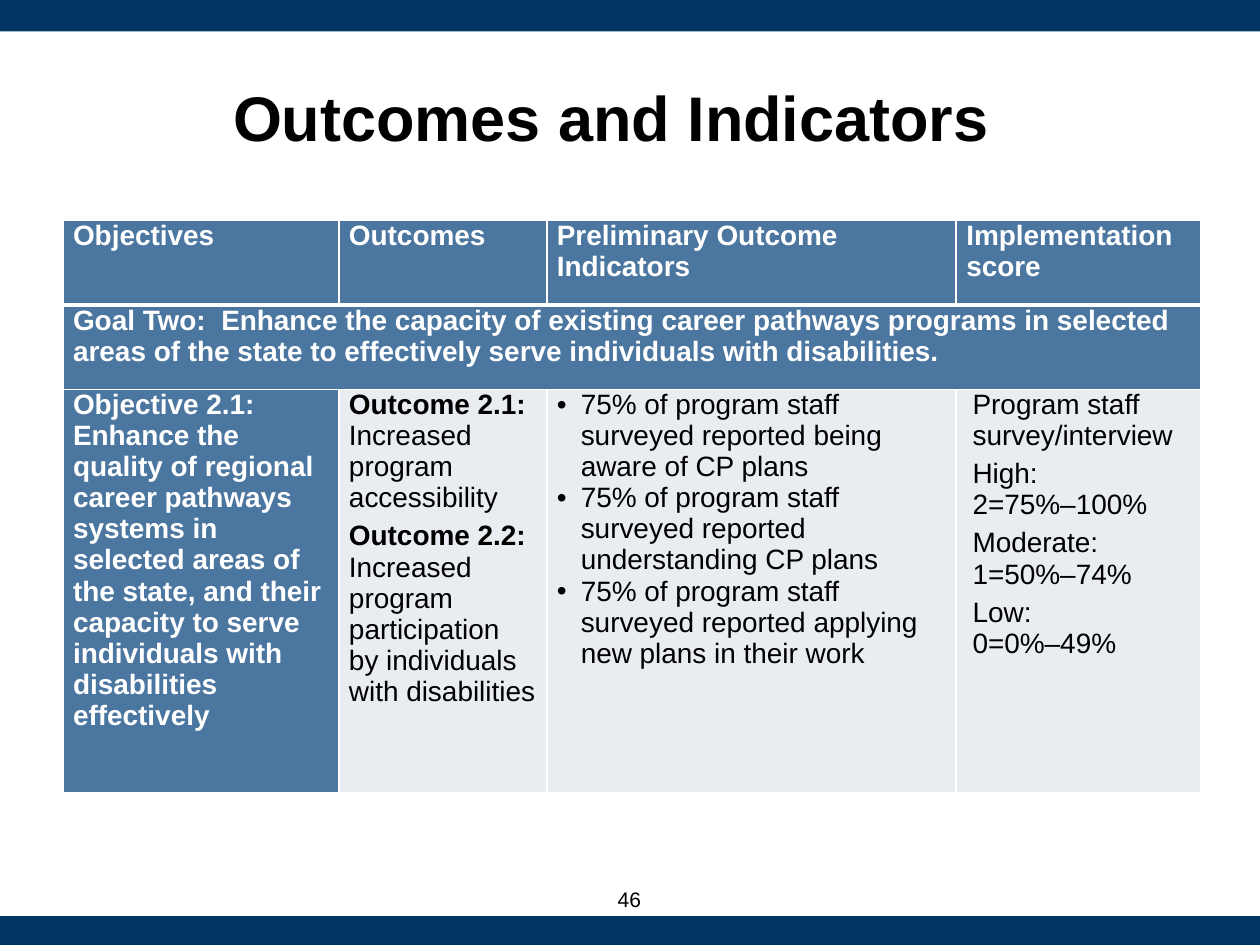
from lxml import etree
from pptx import Presentation
from pptx import util as u
from pptx.dml.color import RGBColor
from pptx.enum import shapes, text
from pptx.oxml import ns

NAVY = RGBColor(0x00, 0x34, 0x62)
BLUE = RGBColor(0x4B, 0x76, 0xA0)
PALE = RGBColor(0xE9, 0xEC, 0xF0)
WHITE = RGBColor(0xFF, 0xFF, 0xFF)
BLACK = RGBColor(0, 0, 0)

COLS = (2.19, 1.65, 3.25, 1.94)
ROWS = (0.67, 0.67, 3.2)
HEADS = ("Objectives", "Outcomes", "Preliminary Outcome Indicators",
         "Implementation score")
GOAL = ("Goal Two:  Enhance the capacity of existing career pathways programs "
        "in selected areas of the state to effectively serve individuals with "
        "disabilities.")
AIM = ("Objective 2.1:  Enhance the quality of regional career pathways "
       "systems in selected areas of the state, and their capacity to serve "
       "individuals with disabilities effectively")
RESULTS = (
    ("Outcome 2.1: ", "Increased program accessibility"),
    ("Outcome 2.2: ",
     "Increased program participation by individuals with disabilities"),
)
SIGNS = [("", "75% of program staff surveyed reported " + end) for end in (
    "being aware of CP plans", "understanding CP plans",
    "applying new plans in their work")]
SCORES = [("", line) for line in (
    "Program staff survey/interview", "High:\n2=75%–100%",
    "Moderate:\n1=50%–74%", "Low:\n0=0%–49%")]


def assign(item, values):
    for name, value in values.items():
        setattr(item, name, value)


def style(run, size, color, bold=False):
    assign(run.font, {"name": "Arial", "size": u.Pt(size), "bold": bold})
    run.font.color.rgb = color


def bar(slide, box):
    shape = slide.shapes.add_shape(shapes.MSO_SHAPE.RECTANGLE, *box)
    shape.shadow.inherit = False
    shape.fill.solid()
    shape.fill.fore_color.rgb = NAVY
    shape.line.fill.background()


def label(shape, box, words, size, bold=False, right=0.1):
    assign(shape, dict(zip(("left", "top", "width", "height"), box)))
    frame = shape.text_frame
    assign(frame, {"word_wrap": True, "margin_right": u.Inches(right),
                   "vertical_anchor": text.MSO_ANCHOR.MIDDLE})
    para = frame.paragraphs[0]
    para.text = words
    para.alignment = text.PP_ALIGN.CENTER
    style(para.runs[0], size, BLACK, bold)


def edge(cell, top, base):
    """Draw white cell borders, with top and base widths in points."""
    props = cell._tc.get_or_add_tcPr()
    for side, width in zip("LRTB", (1, 1, top, base)):
        line = etree.SubElement(props, ns.qn("a:ln" + side), w=str(u.Pt(width)))
        fill = etree.SubElement(line, ns.qn("a:solidFill"))
        etree.SubElement(fill, ns.qn("a:srgbClr"), val=str(WHITE))


def fill(cell, paras, back, color, gap=0, left=0, bullet=False):
    """Write (bold, plain) text pairs as the paragraphs of a cell."""
    side = u.Inches(0.08)
    assign(cell, {"margin_left": side, "margin_right": side,
                  "margin_top": 0, "margin_bottom": 0})
    cell.fill.solid()
    cell.fill.fore_color.rgb = back
    frame = cell.text_frame
    for i, (strong, plain) in enumerate(paras):
        para = frame.add_paragraph() if i else frame.paragraphs[0]
        assign(para, {"space_before": u.Pt(gap), "space_after": u.Pt(gap)})
        if strong:
            style(para.add_run(), 16, color, True)
            para.runs[0].text = strong
        for n, line in enumerate(plain.split("\n") if plain else ()):
            if n:
                para.add_line_break()
            run = para.add_run()
            run.text = line
            style(run, 16, color)
        props = para._p.get_or_add_pPr()
        props.set("marL", str(u.Inches(left)))
        props.set("indent", str(-u.Inches(left) if bullet else 0))
        if bullet:
            etree.SubElement(props, ns.qn("a:buFont"), typeface="Arial")
            etree.SubElement(props, ns.qn("a:buChar"), char="•")


def grid(slide, box):
    table = slide.shapes.add_table(len(ROWS), len(COLS), *box).table
    for col, share in zip(table.columns, COLS):
        col.width = int(box[2] * share / sum(COLS))
    for row, share in zip(table.rows, ROWS):
        row.height = int(box[3] * share / sum(ROWS))
    for r, row in enumerate(table.rows):
        for cell in row.cells:
            edge(cell, 3 if r == 1 else 1, 3 if r == 0 else 1)
    for c, head in enumerate(HEADS):
        fill(table.cell(0, c), [(head, "")], BLUE, WHITE)
    table.cell(1, 0).merge(table.cell(1, len(COLS) - 1))
    for r, words in ((1, GOAL), (2, AIM)):
        fill(table.cell(r, 0), [(words, "")], BLUE, WHITE)
    fill(table.cell(2, 1), RESULTS, PALE, BLACK, gap=2)
    fill(table.cell(2, 2), SIGNS, PALE, BLACK, left=0.19, bullet=True)
    fill(table.cell(2, 3), SCORES, PALE, BLACK, gap=2, left=0.05)


def main():
    deck = Presentation()
    deck.slide_width, deck.slide_height = u.Inches(10), u.Inches(7.5)
    slide = deck.slides.add_slide(deck.slide_layouts[5])

    def area(*box):
        return [u.Inches(n) for n in box]

    for top in (0, 7.27):
        bar(slide, area(0, top, 10, 0.25))
    label(slide.shapes.title, area(0.5, 0.3, 9, 1.25),
          "Outcomes and Indicators", 36, True, right=0.4)
    grid(slide, area(0.5, 1.75, sum(COLS), sum(ROWS)))
    page = area(3.83, 7, 2.33, 0.27)
    label(slide.shapes.add_textbox(*page), page, "46", 12)
    deck.save("out.pptx")


if __name__ == "__main__":
    main()
